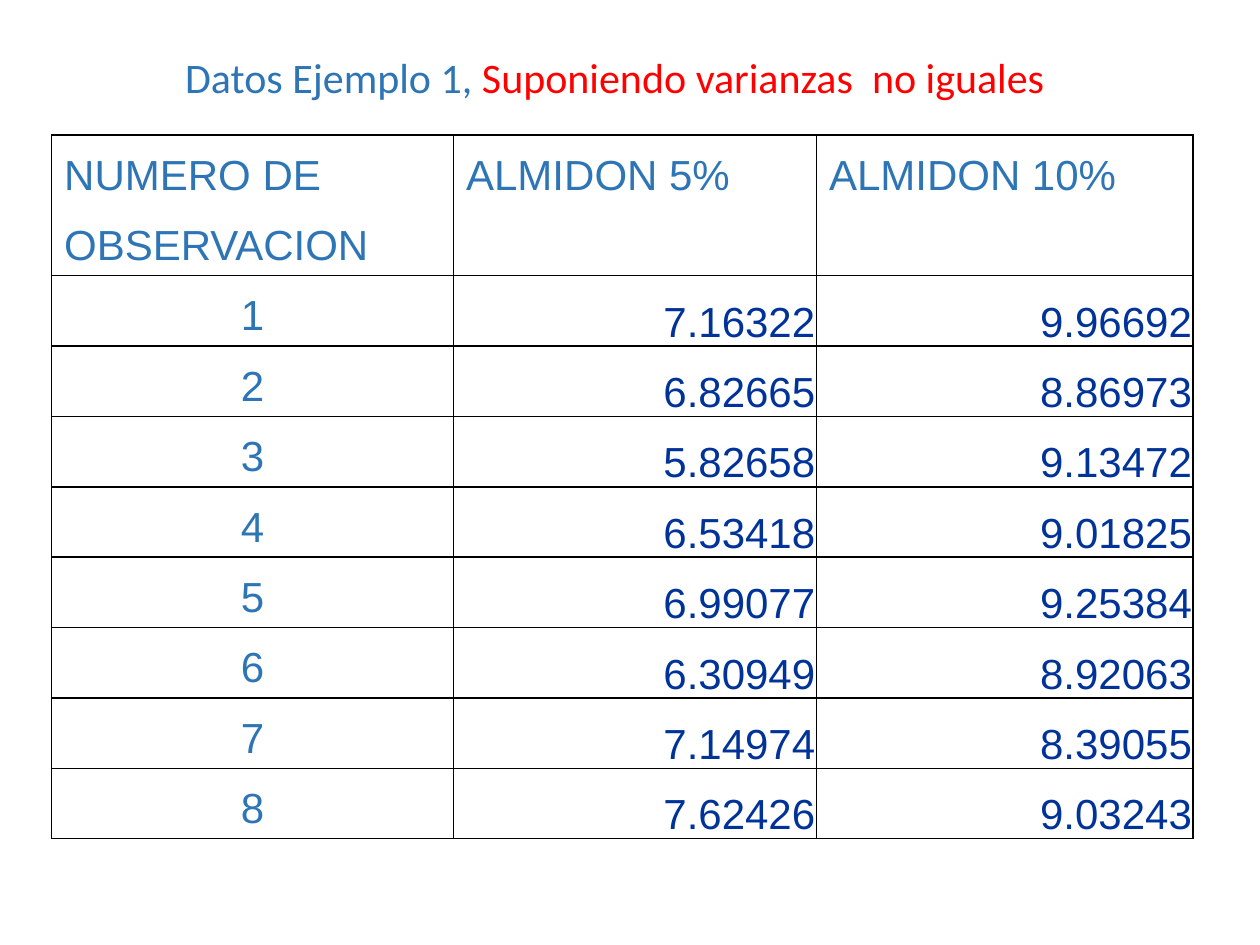
from dataclasses import dataclass

from lxml import etree
from pptx import Presentation
from pptx.dml.color import RGBColor
from pptx.enum.text import MSO_ANCHOR, PP_ALIGN
from pptx.oxml.ns import qn
from pptx.util import Inches, Pt

LEFT, CENTER, RIGHT = PP_ALIGN.LEFT, PP_ALIGN.CENTER, PP_ALIGN.RIGHT
BOTTOM = MSO_ANCHOR.BOTTOM


@dataclass(frozen=True)
class Theme:
    blue: str = "2E75B6"
    navy: str = "003399"
    red: str = "FF0000"
    border: str = "000000"
    border_width: int = Pt(1)
    size: int = Pt(24)
    title_font: str = "Calibri"
    table_font: str = "Arial"


THEME = Theme()

HEADERS = [
    ("NUMERO DE", "ALMIDON 5%", "ALMIDON 10%"),
    ("OBSERVACION", "", ""),
]
OBSERVATIONS = [
    ("7.16322", "9.96692"),
    ("6.82665", "8.86973"),
    ("5.82658", "9.13472"),
    ("6.53418", "9.01825"),
    ("6.99077", "9.25384"),
    ("6.30949", "8.92063"),
    ("7.14974", "8.39055"),
    ("7.62426", "9.03243"),
]
COLUMN_WIDTHS = (3.19, 2.88, 2.99)


def format_run(r, font, color):
    r.font.name = font
    r.font.size = THEME.size
    r.font.color.rgb = RGBColor.from_string(color)


def set_borders(cell, hidden=""):
    """Draw the four cell edges, leaving out the one named in hidden."""
    tc_pr = cell._tc.get_or_add_tcPr()
    for i, edge in enumerate("LRTB"):
        ln = etree.Element(qn(f"a:ln{edge}"), w=str(THEME.border_width))
        if edge == hidden:
            etree.SubElement(ln, qn("a:noFill"))
        else:
            fill = etree.SubElement(ln, qn("a:solidFill"))
            etree.SubElement(fill, qn("a:srgbClr"), val=THEME.border)
        tc_pr.insert(i, ln)


def fill_cell(cell, text, color, align, hidden=""):
    cell.fill.background()
    cell.vertical_anchor = BOTTOM
    set_borders(cell, hidden)
    p = cell.text_frame.paragraphs[0]
    p.text = text
    p.alignment = align
    for r in p.runs:
        format_run(r, THEME.table_font, color)


def add_title(slide, left, top, width, height):
    sp = slide.shapes.add_textbox(left, top, width, height)
    tf = sp.text_frame
    tf.word_wrap = True
    p = tf.paragraphs[0]
    p.alignment = CENTER
    for text, color in (
        ("Datos Ejemplo 1, ", THEME.blue),
        ("Suponiendo varianzas  no iguales", THEME.red),
    ):
        r = p.add_run()
        r.text = text
        format_run(r, THEME.title_font, color)


def add_data_table(slide, left, top, width, height):
    n_rows = len(HEADERS) + len(OBSERVATIONS)
    table = slide.shapes.add_table(
        n_rows, len(COLUMN_WIDTHS), left, top, width, height
    ).table
    table.first_row = table.horz_banding = False
    for column, share in zip(table.columns, COLUMN_WIDTHS):
        column.width = int(width * share / sum(COLUMN_WIDTHS))

    # Two header rows that read as one
    for i, (labels, hidden) in enumerate(zip(HEADERS, "BT")):
        for j, label in enumerate(labels):
            fill_cell(table.cell(i, j), label, THEME.blue, LEFT, hidden)

    # Numbered observations
    for number, values in enumerate(OBSERVATIONS, start=1):
        i = len(HEADERS) + number - 1
        fill_cell(table.cell(i, 0), str(number), THEME.blue, CENTER)
        for j, value in enumerate(values, start=1):
            cell = table.cell(i, j)
            fill_cell(cell, value, THEME.navy, RIGHT)
            cell.margin_left = cell.margin_right = cell.margin_top = Inches(0.01)
            cell.margin_bottom = 0


def main():
    prs = Presentation()
    prs.slide_width, prs.slide_height = Inches(10), Inches(7.5)
    slide = prs.slides.add_slide(prs.slide_layouts[6])
    add_data_table(slide, Inches(0.41), Inches(1.07), Inches(9.06), Inches(5.59))
    add_title(slide, Inches(0.43), Inches(0.36), Inches(8.9), Inches(0.5))
    prs.save("out.pptx")


if __name__ == "__main__":
    main()
